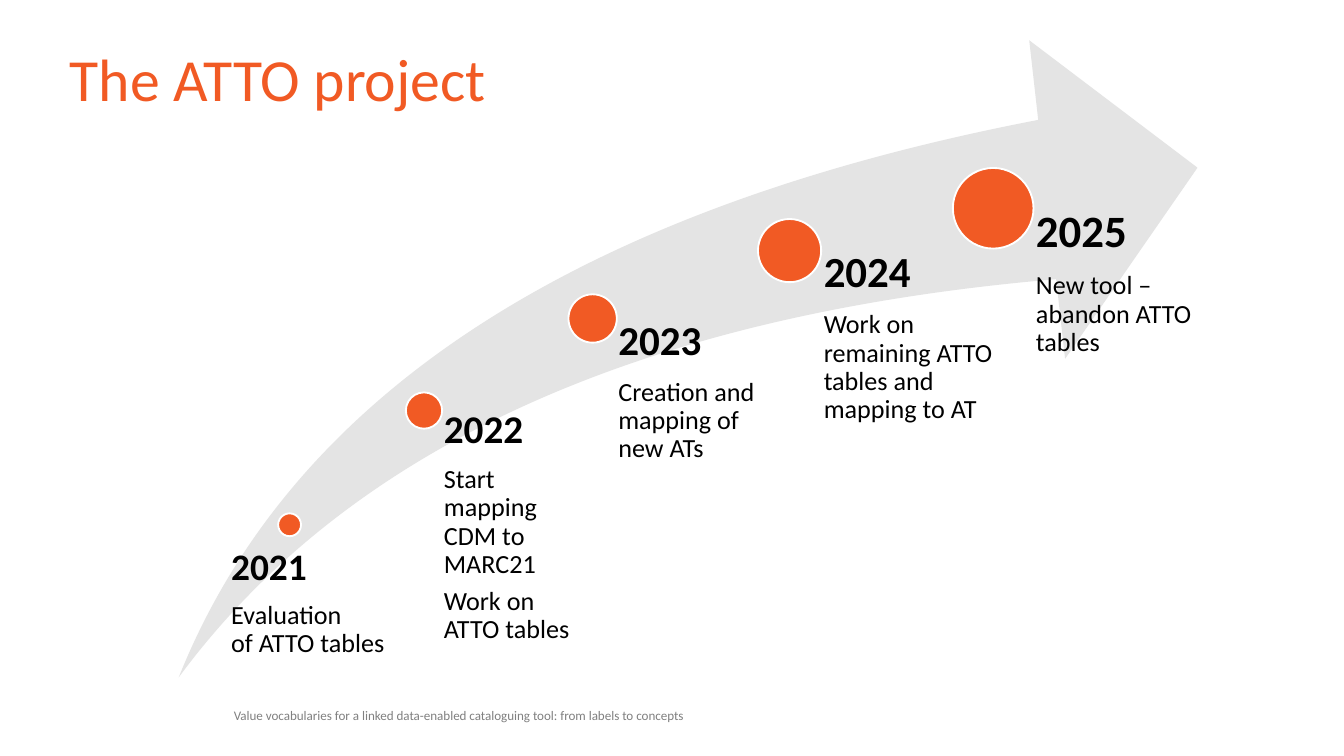
from pptx import Presentation
from pptx.dml.color import RGBColor
from pptx.enum.shapes import MSO_SHAPE as Shape
from pptx.enum.text import MSO_ANCHOR as Anchor
from pptx.util import Inches, Pt

ORANGE, GREY, BLACK, WHITE = "F15A24", "E4E4E4", "000000", "FFFFFF"
PAGE_WIDTH = 10
ARROW_BOX = (1.33, 0.3, 7.58, 4.74)

# Circle (left, top, diameter), label (left, top, width, height), year size, year, details
MILESTONES = [
    ((2.07, 3.82, 0.17), (1.63, 4.08, 2.05, 0.79), 20, "2021",
     ["Evaluation \vof ATTO tables"]),
    ((3.02, 2.92, 0.27), (3.16, 3.05, 1.25, 1.99), 21, "2022",
     ["Start mapping CDM to MARC21", "Work on ATTO tables"]),
    ((4.23, 2.19, 0.36), (4.41, 2.38, 1.46, 2.66), 22, "2023",
     ["Creation and mapping of new ATs"]),
    ((5.64, 1.63, 0.47), (5.88, 1.86, 1.52, 3.18), 23, "2024",
     ["Work on remaining ATTO tables and mapping to AT"]),
    ((7.09, 1.25, 0.6), (7.39, 1.55, 1.52, 3.49), 24, "2025",
     ["New tool – abandon ATTO tables"]),
]


def color(hex_code):
    return RGBColor.from_string(hex_code)


def add_text(shapes, box, lines, hex_code=BLACK, anchor=Anchor.TOP,
             insets=(0, 0, 0, 0), line_spacing=0.9, after=0):
    """Each line is (text, size, bold); after is a share of the font size."""
    frame = shapes.add_textbox(*map(Inches, box)).text_frame
    frame.word_wrap = True
    frame.vertical_anchor = anchor
    (frame.margin_left, frame.margin_top,
     frame.margin_right, frame.margin_bottom) = map(Inches, insets)
    for index, (text, size, bold) in enumerate(lines):
        para = frame.add_paragraph() if index else frame.paragraphs[0]
        para.text = text
        para.line_spacing = line_spacing
        para.space_after = Pt(size * after)
        for span in para.runs:
            span.font.name = "Calibri"
            span.font.size = Pt(size)
            span.font.bold = bold
            span.font.color.rgb = color(hex_code)


def add_filled(shapes, kind, box, fill, line=None):
    shape = shapes.add_shape(kind, *map(Inches, box))
    shape.shadow.inherit = False
    shape.fill.solid()
    shape.fill.fore_color.rgb = color(fill)
    if line:
        shape.line.color.rgb = color(line)
        shape.line.width = Pt(1)
    else:
        shape.line.fill.background()
    return shape


def add_milestone(shapes, circle, label, year_size, year, details):
    left, top, diameter = circle
    add_filled(shapes, Shape.OVAL, (left, top, diameter, diameter), ORANGE, WHITE)
    lines = [(year, year_size, True)] + [(detail, 14, False) for detail in details]
    add_text(shapes, label, lines, insets=(diameter * 0.53, 0, 0, 0), after=0.35)


def add_timeline(page, box):
    shapes = page.shapes.add_group_shape().shapes
    arrow = add_filled(shapes, Shape.SWOOSH_ARROW, box, GREY)
    arrow.adjustments[0] = 0.25
    arrow.adjustments[1] = 0.25
    for milestone in MILESTONES:
        add_milestone(shapes, *milestone)


def main():
    deck = Presentation()
    deck.slide_width = Inches(PAGE_WIDTH)
    deck.slide_height = Inches(PAGE_WIDTH * 9 / 16)
    page = deck.slides.add_slide(deck.slide_layouts[6])
    add_text(page.shapes, (0.42, 0.3, 3.46, 0.63), [("The ATTO project", 32, False)],
             ORANGE, Anchor.MIDDLE, insets=(0.1, 0.05, 0.1, 0.05))
    add_timeline(page, ARROW_BOX)
    footer = "Value vocabularies for a linked data-enabled cataloguing tool: from labels to concepts"
    add_text(page.shapes, (1.74, 5.21, 3.5, 0.17), [(footer, 7, False)],
             "808080", Anchor.BOTTOM, line_spacing=0.7)
    deck.save("out.pptx")


if __name__ == "__main__":
    main()
